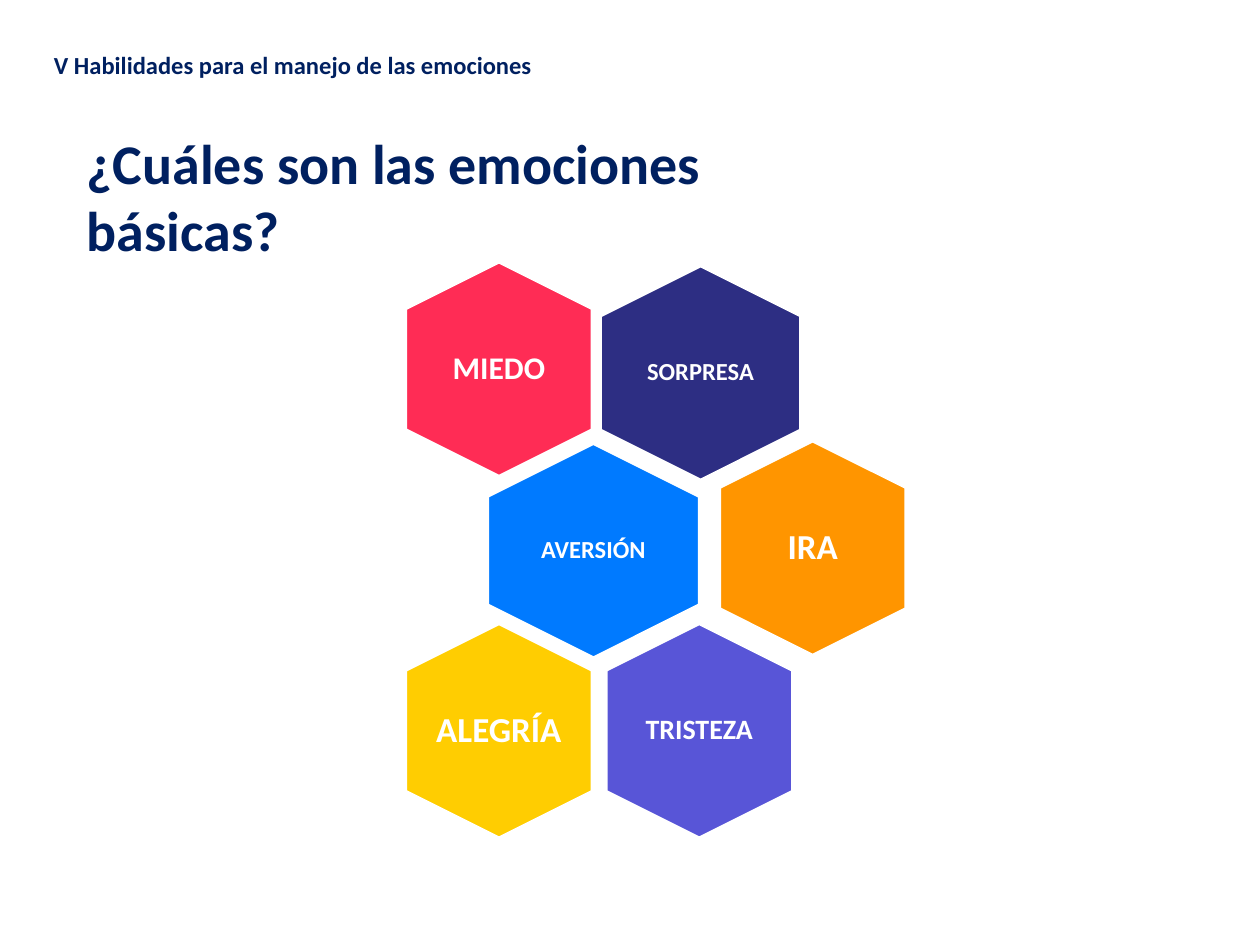
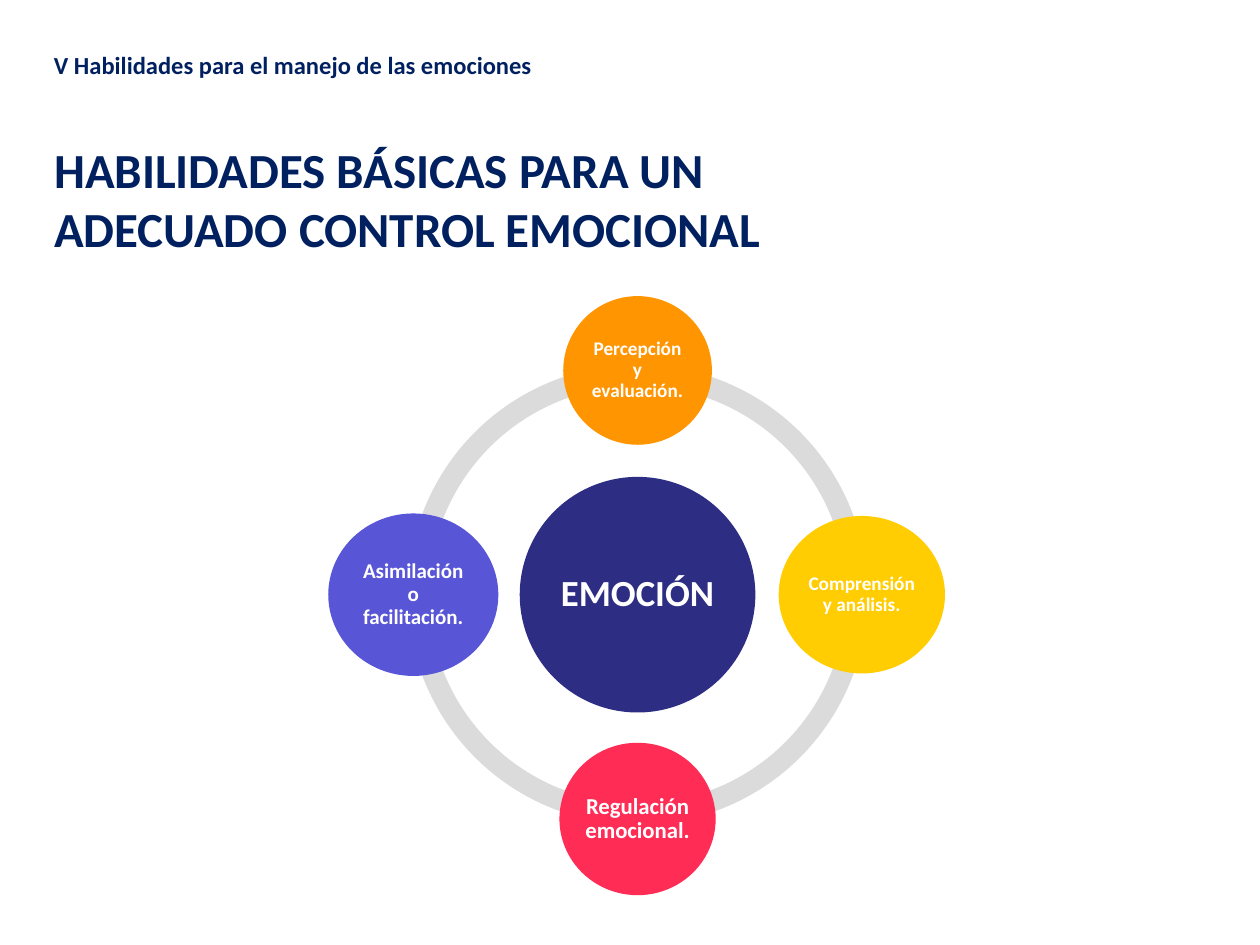
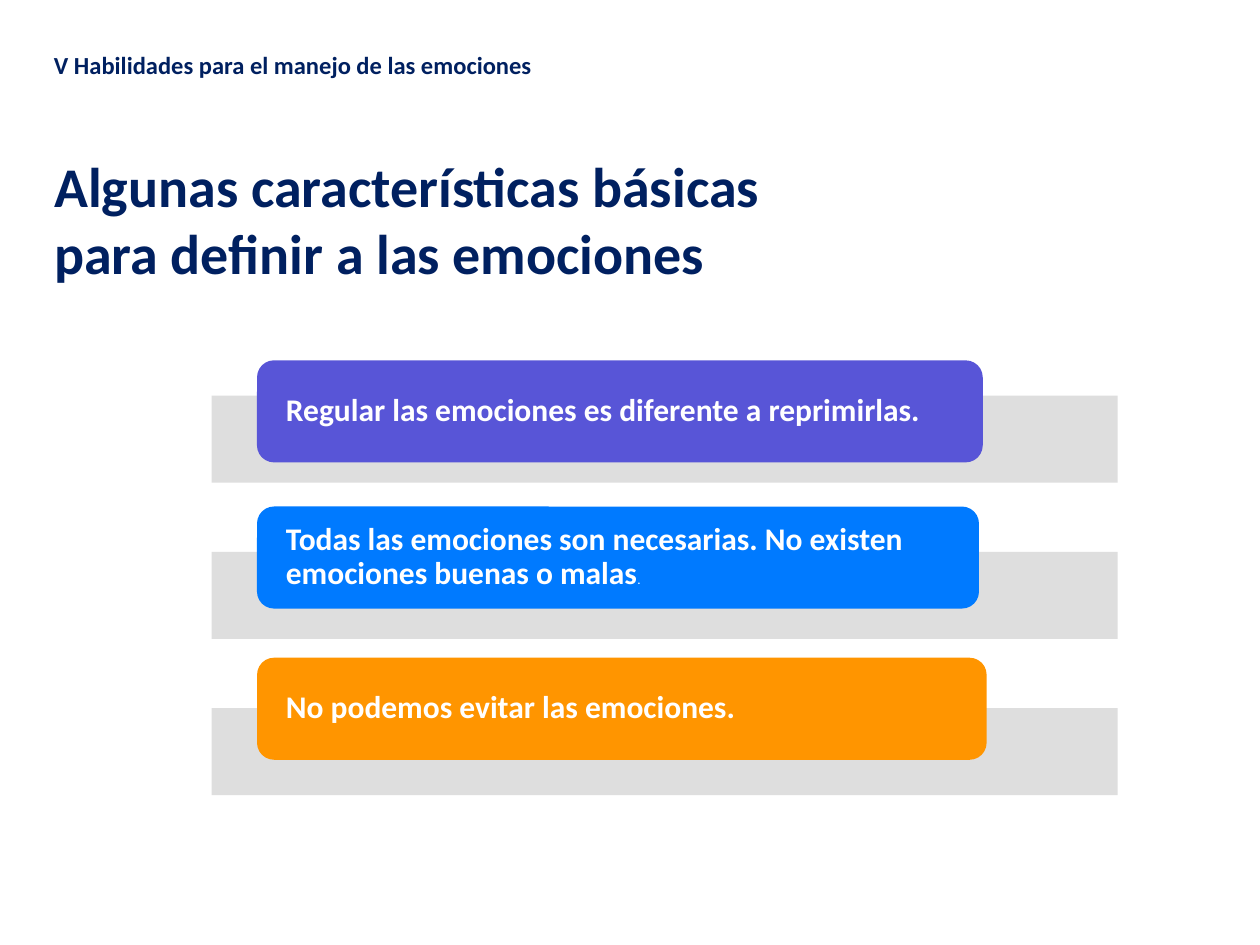
import math

import pptx
import pptx.dml.color
import pptx.enum.shapes
import pptx.enum.text
import pptx.oxml
import pptx.oxml.ns
import pptx.util
from pptx.util import Inches

SHAPE = pptx.enum.shapes.MSO_SHAPE
ALIGN = pptx.enum.text.PP_ALIGN
ANCHOR = pptx.enum.text.MSO_ANCHOR

FONT = "Calibri"
NAVY, WHITE, GREY = "002060", "FFFFFF", "DBDBDB"
INDIGO, RED, BLUE = "2D2E83", "FF2C55", "007AFF"
ORANGE, VIOLET, YELLOW = "FF9500", "5855D7", "FFCD01"
HEADER = "V Habilidades para el manejo de las emociones"


def rgb(color):
    return pptx.dml.color.RGBColor.from_string(color)


def add_run(p, text, size, color):
    r = p.add_run()
    r.text = text
    r.font.name = FONT
    r.font.size = pptx.util.Pt(size)
    r.font.bold = True
    r.font.color.rgb = rgb(color)


def set_frame(tf, side=0.1, top=0.05, anchor=ANCHOR.TOP):
    tf.word_wrap = True
    tf.auto_size = pptx.enum.text.MSO_AUTO_SIZE.NONE
    tf.vertical_anchor = anchor
    tf.margin_left = tf.margin_right = Inches(side)
    tf.margin_top = tf.margin_bottom = Inches(top)


def write_label(sp, runs, align=ALIGN.CENTER, side=0.02, top=0.02):
    """Write (text, size) runs in white, centred vertically in a shape."""
    set_frame(sp.text_frame, side, top, ANCHOR.MIDDLE)
    p = sp.text_frame.paragraphs[0]
    p.alignment = align
    p.line_spacing = 0.9
    for text, size in runs:
        add_run(p, text, size, WHITE)


def add_filled(s, kind, box, fill):
    sp = s.shapes.add_shape(kind, *map(Inches, box))
    sp.shadow.inherit = False
    sp.fill.solid()
    sp.fill.fore_color.rgb = rgb(fill)
    sp.line.fill.background()
    return sp


def centred(cx, cy, width, height):
    return cx - width / 2, cy - height / 2, width, height


def add_titled_slide(prs, title, box, size):
    s = prs.slides.add_slide(prs.slide_layouts[5])
    sp = s.shapes.title
    sp.left, sp.top, sp.width, sp.height = map(Inches, box)
    set_frame(sp.text_frame, top=0.11)
    p = sp.text_frame.paragraphs[0]
    p.alignment = ALIGN.LEFT
    add_run(p, title, size, NAVY)

    header = s.shapes.add_textbox(*map(Inches, (0.33, 0.35, 5.5, 0.34)))
    set_frame(header.text_frame)
    add_run(header.text_frame.paragraphs[0], HEADER, 14, NAVY)
    return s


def add_honeycomb(s, left, top, cells):
    """Place upright hexagons by centre offset from the left top corner."""
    length = 1.69
    for text, size, fill, dx, dy, breadth in cells:
        cx, cy = left + dx, top + dy
        sp = add_filled(s, SHAPE.HEXAGON, centred(cx, cy, length, breadth), fill)
        sp.rotation = 90
        sp.line.color.rgb = rgb(WHITE)
        sp.line.width = pptx.util.Pt(1)
        label = s.shapes.add_textbox(*map(Inches, centred(cx, cy, 1.1, 1.16)))
        write_label(label, [(text, size)], side=0, top=0)


def add_emotion_wheel(s, cx, cy, hub, satellites):
    """Draw a ring, its hub and satellites spaced clockwise from the top."""
    # Angle adjustments count 216 units to a full turn.
    for quarter in range(4):
        arc = add_filled(s, SHAPE.BLOCK_ARC, centred(cx, cy, 3.65, 3.65), GREY)
        arc.adjustments[0] = quarter * 54
        arc.adjustments[1] = (quarter + 1) % 4 * 54
        arc.adjustments[2] = 0.046

    sp = add_filled(s, SHAPE.OVAL, centred(cx, cy, 1.87, 1.87), INDIGO)
    write_label(sp, [(hub, 21)])

    radius = 1.78
    for i, (text, size, fill, width, height) in enumerate(satellites):
        angle = 2 * math.pi * i / len(satellites)
        x, y = cx + radius * math.sin(angle), cy - radius * math.cos(angle)
        sp = add_filled(s, SHAPE.OVAL, centred(x, y, width, height), fill)
        write_label(sp, [(text, size)])


def add_statement_rows(s, left, top, width, rows):
    """Stack grey bars, each with a coloured card that overlaps its top."""
    pitch, bar_height = 1.24, 0.69
    for i, (runs, fill, card_width, rise) in enumerate(rows):
        bar_top = top + i * pitch
        bar = add_filled(s, SHAPE.RECTANGLE, (left, bar_top, width, bar_height), GREY)
        color = bar.fill._xPr.find(".//" + pptx.oxml.ns.qn("a:srgbClr"))
        color.append(pptx.oxml.parse_xml(
            f'<a:alpha {pptx.oxml.ns.nsdecls("a")} val="90000"/>'))
        card_box = (left + 0.36, bar_top - rise, card_width, 0.81)
        card = add_filled(s, SHAPE.ROUNDED_RECTANGLE, card_box, fill)
        write_label(card, runs, ALIGN.LEFT, side=0.19, top=0)


def main():
    prs = pptx.Presentation()
    prs.slide_width, prs.slide_height = Inches(10), Inches(7.5)

    s = add_titled_slide(prs, "¿Cuáles son las emociones básicas?",
                         (0.59, 0.91, 5.27, 1.3), 32)
    add_honeycomb(s, 3.23, 2.08, [
        ("SORPRESA", 14, INDIGO, 2.33, 0.88, 1.58),
        ("MIEDO", 18, RED, 0.73, 0.85, 1.47),
        ("AVERSIÓN", 14, BLUE, 1.48, 2.29, 1.67),
        ("IRA", 20, ORANGE, 3.22, 2.27, 1.47),
        ("TRISTEZA", 16, VIOLET, 2.32, 3.72, 1.47),
        ("ALEGRÍA", 20, YELLOW, 0.73, 3.72, 1.47),
    ])

    s = add_titled_slide(prs, "HABILIDADES BÁSICAS PARA UN ADECUADO CONTROL EMOCIONAL",
                         (0.33, 1, 6.32, 1.04), 28)
    add_emotion_wheel(s, 5.06, 4.72, "EMOCIÓN", [
        ("Percepción y evaluación.", 11, ORANGE, 1.18, 1.18),
        ("Comprensión y análisis.", 11, YELLOW, 1.32, 1.25),
        ("Regulación emocional.", 13, RED, 1.24, 1.21),
        ("Asimilación o facilitación.", 12, VIOLET, 1.35, 1.29),
    ])

    s = add_titled_slide(prs, "Algunas características básicas para definir a las emociones",
                         (0.33, 1.09, 5.92, 1.18), 32)
    add_statement_rows(s, 1.68, 3.14, 7.19, [
        ([("Regular las emociones es diferente a reprimirlas.", 18)], VIOLET, 5.76, 0.28),
        ([("Todas las emociones son necesarias. No existen emociones buenas o malas", 18),
          (".", 6)], BLUE, 5.73, 0.36),
        ([("No podemos evitar las emociones.", 18)], ORANGE, 5.79, 0.4),
    ])

    prs.save("out.pptx")


if __name__ == "__main__":
    main()
